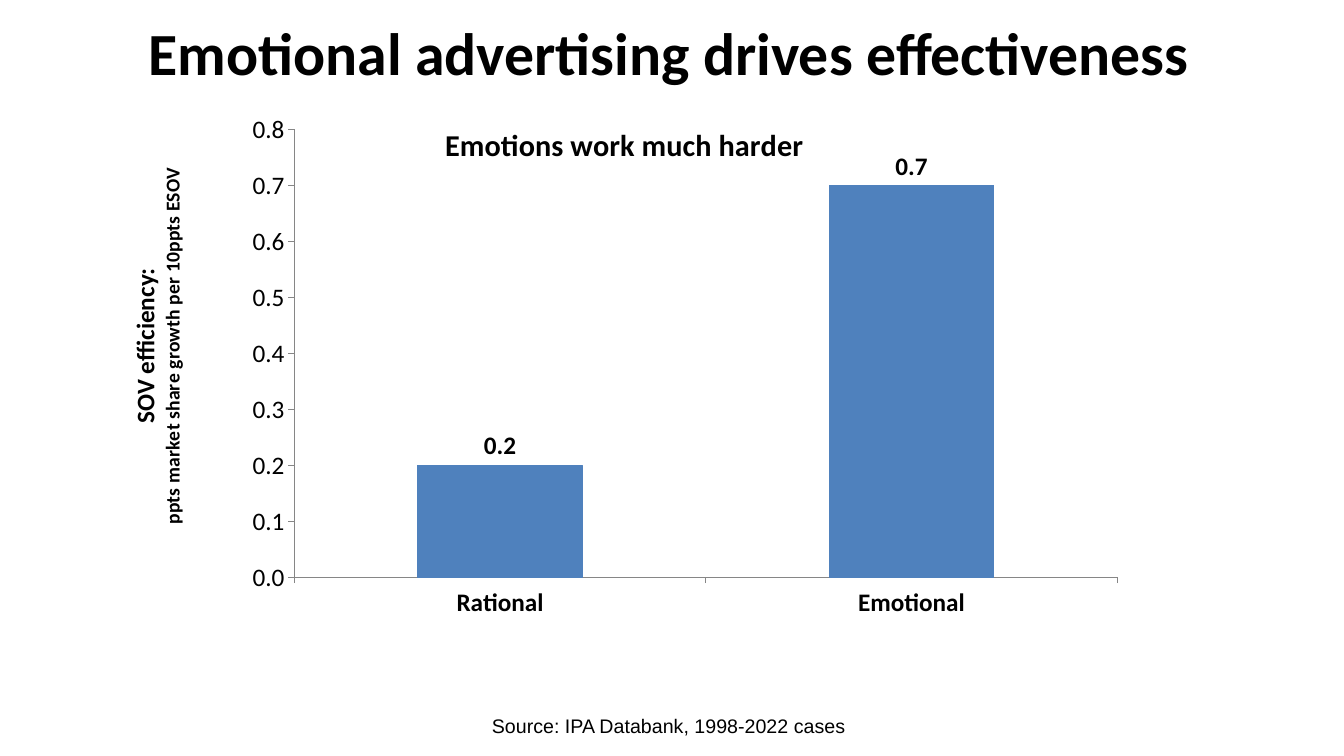
from lxml import etree
from pptx import Presentation
from pptx.chart.data import CategoryChartData
from pptx.dml.color import RGBColor
from pptx.enum.chart import XL_CHART_TYPE, XL_LABEL_POSITION, XL_TICK_MARK
from pptx.enum.text import MSO_ANCHOR, MSO_AUTO_SIZE, PP_ALIGN
from pptx.oxml.ns import qn
from pptx.util import Inches, Pt

BLACK, BLUE, GREY = "000000", "4F81BD", "868686"


def rgb(color):
    return RGBColor.from_string(color)


def set_font(font, size, name="Calibri", bold=False):
    font.name = name
    font.size = Pt(size)
    font.bold = bold
    font.color.rgb = rgb(BLACK)


def set_layout(element, index, **settings):
    layout = element.find(qn("c:layout"))
    if layout is None:
        layout = etree.Element(qn("c:layout"))
        element.insert(index, layout)
    for child in list(layout):
        layout.remove(child)
    manual = etree.SubElement(layout, qn("c:manualLayout"))
    for tag, value in settings.items():
        etree.SubElement(manual, qn(f"c:{tag}")).set("val", str(value))


def write_chart_title(title, lines, x, y):
    tf = title.text_frame
    for i, (text, size) in enumerate(lines):
        p = tf.add_paragraph() if i else tf.paragraphs[0]
        p.text = text
        set_font(p.font, size, bold=True)
    set_layout(title._element, 1, xMode="edge", yMode="edge", x=x, y=y)
    return tf


def style_axis(axis, bold):
    axis.has_major_gridlines = False
    axis.major_tick_mark = XL_TICK_MARK.OUTSIDE
    axis.minor_tick_mark = XL_TICK_MARK.NONE
    axis.format.line.color.rgb = rgb(GREY)
    axis.format.line.width = Pt(0.75)
    set_font(axis.tick_labels.font, 18, bold=bold)


def add_title(slide, text):
    title = slide.shapes.title
    title.left, title.top = Inches(0.64), Inches(0)
    title.width, title.height = Inches(12), Inches(1.03)
    tf = title.text_frame
    tf.text = text
    tf.vertical_anchor = MSO_ANCHOR.MIDDLE
    p = tf.paragraphs[0]
    p.alignment = PP_ALIGN.CENTER
    set_font(p.font, 42.7, bold=True)


def add_efficiency_chart(slide):
    data = CategoryChartData(number_format="0.0")
    data.categories = ["Rational", "Emotional"]
    data.add_series("Series 1", [0.2, 0.7])
    chart = slide.shapes.add_chart(
        XL_CHART_TYPE.COLUMN_CLUSTERED,
        Inches(0.64), Inches(0.88), Inches(12), Inches(5.77), data).chart
    set_font(chart.font, 18)
    chart.has_legend = False

    chart.has_title = True
    write_chart_title(chart.chart_title, [("Emotions work much harder", 21.6)], 0.31, 0.05)
    chart.chart_title._element.find(qn("c:overlay")).set("val", "1")

    style_axis(chart.category_axis, bold=True)
    axis = chart.value_axis
    style_axis(axis, bold=False)
    axis.minimum_scale, axis.maximum_scale, axis.major_unit = 0, 0.8, 0.1
    axis.tick_labels.number_format = "0.0"
    axis.tick_labels.number_format_is_linked = False
    tf = write_chart_title(
        axis.axis_title,
        [("SOV efficiency:", 18), ("ppts market share growth per 10ppts ESOV", 14)],
        0.05, 0.13)
    body = tf._txBody.bodyPr
    body.set("rot", "-5400000")
    body.set("vert", "horz")

    plot = chart.plots[0]
    plot.gap_width = 150
    plot.vary_by_categories = False
    series = plot.series[0]
    series.format.fill.solid()
    series.format.fill.fore_color.rgb = rgb(BLUE)
    series.format.line.color.rgb = rgb(BLUE)
    series.format.line.width = Pt(0.75)
    labels = series.data_labels
    labels.show_value = True
    labels.number_format = "0.0"
    labels.number_format_is_linked = False
    labels.position = XL_LABEL_POSITION.OUTSIDE_END
    set_font(labels.font, 18, bold=True)
    set_layout(chart._chartSpace.chart.plotArea, 0, layoutTarget="inner",
               xMode="edge", yMode="edge", x=0.19, y=0.07, w=0.68, h=0.77)


def add_source(slide, text):
    box = slide.shapes.add_textbox(Inches(4.78), Inches(7.03), Inches(3.72), Inches(0.34))
    tf = box.text_frame
    tf.word_wrap = False
    tf.auto_size = MSO_AUTO_SIZE.SHAPE_TO_FIT_TEXT
    tf.text = text
    set_font(tf.paragraphs[0].font, 14, name="Arial")


def main():
    prs = Presentation()
    prs.slide_width, prs.slide_height = Inches(13.33), Inches(7.5)
    slide = prs.slides.add_slide(prs.slide_layouts[5])
    add_title(slide, "Emotional advertising drives effectiveness")
    add_efficiency_chart(slide)
    add_source(slide, "Source: IPA Databank, 1998-2022 cases")
    prs.save("out.pptx")


if __name__ == "__main__":
    main()
